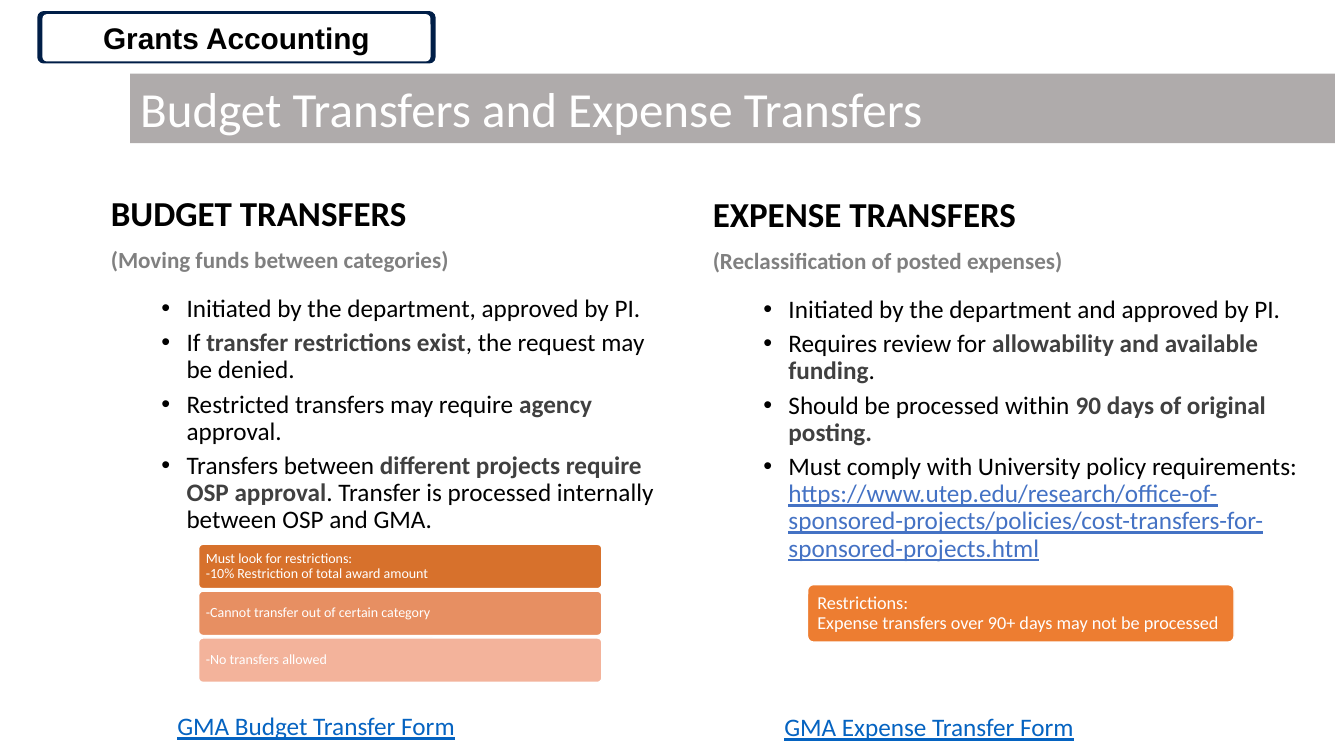
from lxml import etree
from pptx import Presentation
from pptx.dml.color import RGBColor
from pptx.enum import shapes, text
from pptx.oxml.ns import qn
from pptx.util import Inches, Pt

HUES = {"white": "FFFFFF", "black": "000000", "band": "AFABAB", "navy": "001E47",
        "note": "808080", "key": "404040", "url": "4472C4", "link": "0563C1"}
TITLE = "Budget Transfers and Expense Transfers"
BADGE = "Grants Accounting"
COLUMNS = [
    {"box": (1, 1.9, 5.67, 4.86), "head": "BUDGET TRANSFERS",
     "note": "(Moving funds between categories)",
     "points": [
         ["Initiated by the department, approved by PI."],
         ["If ", "transfer restrictions exist", ", the request may be denied."],
         ["Restricted transfers may require ", "agency ", "approval."],
         ["Transfers between ", "different projects require OSP approval",
          ". Transfer is processed internally between OSP and GMA."]]},
    {"box": (6.97, 1.91, 6.02, 4.86), "head": "EXPENSE TRANSFERS",
     "note": "(Reclassification of posted expenses)",
     "points": [
         ["Initiated by the department and approved by PI."],
         ["Requires review for ", "allowability and available funding", "."],
         ["Should be processed within ", "90 days of original posting."],
         ["Must comply with University policy requirements: ",
          "https://www.utep.edu/research/office-of-sponsored-projects/"
          "policies/cost-transfers-for-sponsored-projects.html"]]},
]
LIMITS = [
    ("Must look for restrictions:\n-10% Restriction of total award amount", "D7712C"),
    ("-Cannot transfer out of certain category", "E78F62"),
    ("-No transfers allowed", "F3B39B"),
]
LATE = ("Restrictions:\nExpense transfers over 90+ days may not be processed", "ED7D31")
FORMS = [("GMA Budget Transfer Form", (1.66, 7, 6.02, 0.71)),
         ("GMA Expense Transfer Form", (7.68, 7.01, 5.11, 0.71))]


def place(shape, box):
    shape.left, shape.top, shape.width, shape.height = map(Inches, box)


def style(run, size, hue, bold=False, line=None, face="Calibri"):
    font = run.font
    font.name, font.size, font.bold, font.underline = face, Pt(size), bold, line
    font.color.rgb = RGBColor.from_string(HUES[hue])


def bullet(para, sign=None):
    props = para._p.get_or_add_pPr()
    props.set("marL", str(Inches(0.75 if sign else 0)))
    props.set("indent", str(Inches(-0.25 if sign else 0)))
    if sign:
        etree.SubElement(props, qn("a:buFont")).set("typeface", "Arial")
        etree.SubElement(props, qn("a:buChar")).set("char", sign)
    else:
        etree.SubElement(props, qn("a:buNone"))


def space(para, before):
    para.line_spacing = 0.9
    para.space_before = Pt(before)


def panel(box, fill, curve, edge=None):
    shape = slide.shapes.add_shape(shapes.MSO_SHAPE.ROUNDED_RECTANGLE, *map(Inches, box))
    shape.adjustments[0] = curve
    shape.shadow.inherit = False
    shape.fill.solid()
    shape.fill.fore_color.rgb = RGBColor.from_string(fill)
    if edge:
        shape.line.color.rgb = RGBColor.from_string(edge)
        shape.line.width = Pt(1)
    else:
        shape.line.fill.background()
    return shape


def card(words, fill, box, size, inset):
    frame = panel(box, fill, 0.1, HUES["white"]).text_frame
    frame.margin_left = frame.margin_right = Inches(inset)
    frame.margin_top = frame.margin_bottom = Inches(inset)
    frame.word_wrap = True
    frame.vertical_anchor = text.MSO_ANCHOR.MIDDLE
    para = frame.paragraphs[0]
    para.text = words
    para.alignment = text.PP_ALIGN.LEFT
    space(para, 0)
    for run in para.runs:
        style(run, size, "white")


def column(body, data):
    place(body, data["box"])
    frame = body.text_frame
    frame.auto_size = text.MSO_AUTO_SIZE.NONE
    frame.vertical_anchor = text.MSO_ANCHOR.TOP
    frame.text = data["head"] + "\n" + data["note"]
    looks = [(25, "black", 0), (16.5, "note", 10)]
    for para, (size, hue, gap) in zip(frame.paragraphs, looks):
        bullet(para)
        space(para, gap)
        style(para.runs[0], size, hue, True)
    for row, parts in enumerate(data["points"]):
        para = frame.add_paragraph()
        para.level = 1
        bullet(para, "•")
        space(para, 5 if row else 16)
        for spot, part in enumerate(parts):
            run = para.add_run()
            run.text = part
            if part.startswith("http"):
                style(run, 18, "url", line=True)
            else:
                style(run, 18, "key" if spot % 2 else "black", spot % 2 == 1)


deck = Presentation()
deck.slide_width, deck.slide_height = Inches(13.33), Inches(7.5)
slide = deck.slides.add_slide(deck.slide_layouts[3])
title, *bodies = slide.placeholders

place(title, (1.29, 0.73, 11.95, 0.69))
title.fill.solid()
title.fill.fore_color.rgb = RGBColor.from_string(HUES["band"])
title.text_frame.text = TITLE
title.text_frame.auto_size = text.MSO_AUTO_SIZE.NONE
title.text_frame.vertical_anchor = text.MSO_ANCHOR.MIDDLE
title.text_frame.paragraphs[0].alignment = text.PP_ALIGN.LEFT
style(title.text_frame.paragraphs[0].runs[0], 35, "white")

for body, data in zip(bodies, COLUMNS):
    column(body, data)

for row, (words, fill) in enumerate(LIMITS):
    card(words, fill, (1.97, 5.4 + row * 0.465, 4, 0.44), 10, 0.06)
card(*LATE, (8.01, 5.8, 4.23, 0.57), 13, 0.08)

panel((0.37, 0.11, 3.95, 0.52), HUES["navy"], 0.12)
label = panel((0.42, 0.14, 3.85, 0.47), HUES["white"], 0.1).text_frame
label.text = BADGE
label.vertical_anchor = text.MSO_ANCHOR.MIDDLE
label.paragraphs[0].alignment = text.PP_ALIGN.CENTER
style(label.paragraphs[0].runs[0], 21.3, "black", True, face="Arial")

for words, box in FORMS:
    frame = slide.shapes.add_textbox(*map(Inches, box)).text_frame
    frame.word_wrap = True
    frame.text = words
    style(frame.paragraphs[0].runs[0], 18, "link", line=True)

deck.save("out.pptx")
